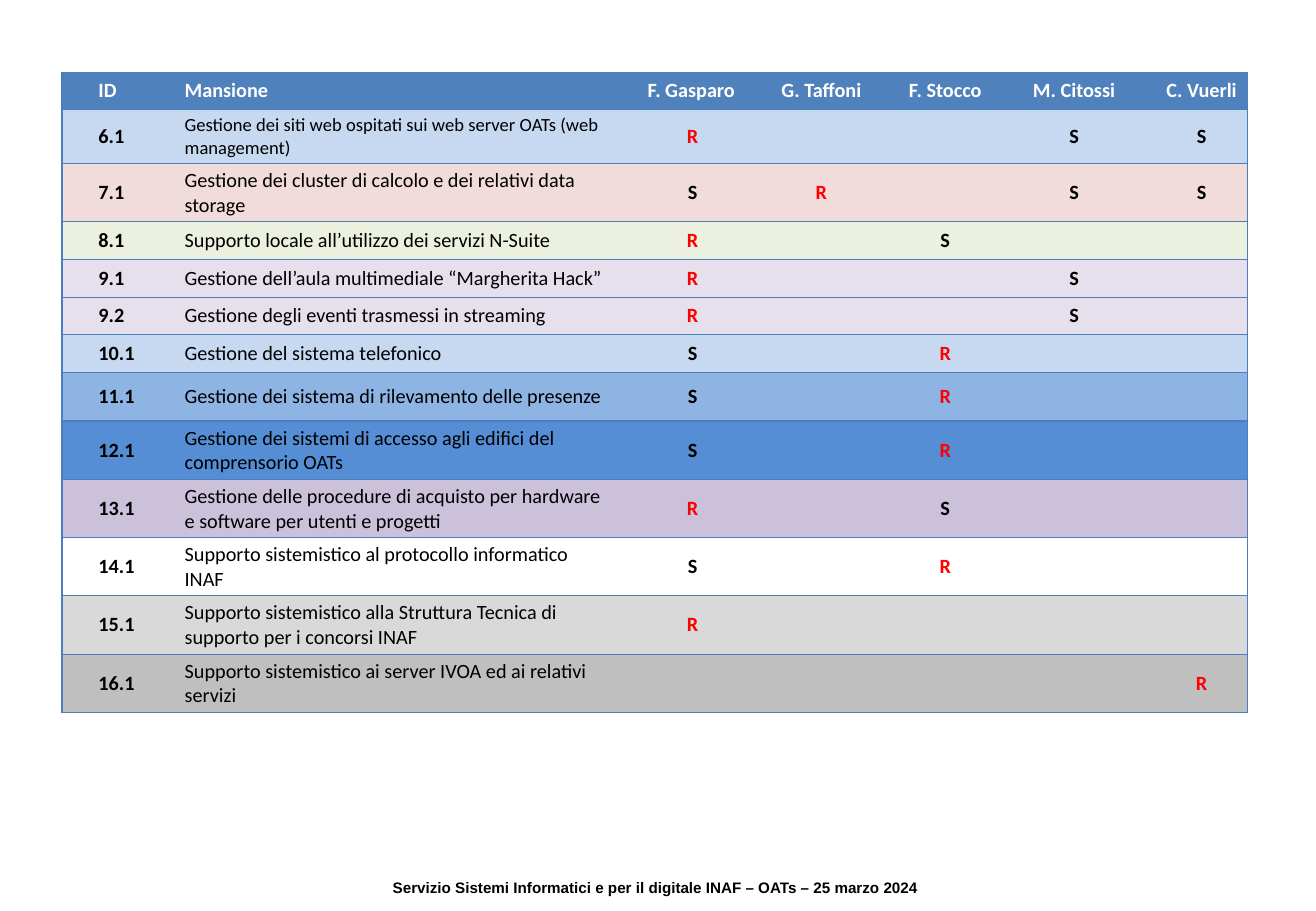
import lxml.etree
import pptx
import pptx.dml.color
import pptx.enum.text
import pptx.oxml.ns
import pptx.util

Inches = pptx.util.Inches
Pt = pptx.util.Pt
qn = pptx.oxml.ns.qn
ALIGN = pptx.enum.text.PP_ALIGN
MIDDLE = pptx.enum.text.MSO_ANCHOR.MIDDLE

LINE = "4B7EBC"
HEAD = "4F81BD"
ROLES = {"R": "FF0000", "S": "000000"}
WIDTHS = [0.71, 3.81, 1.1, 1.02, 1.02, 1.1, 1]
NAMES = ["ID", "Mansione", "F. Gasparo", "G. Taffoni", "F. Stocco",
         "M. Citossi", "C. Vuerli"]

# ID, task, one role letter per person, fill, row height
TASKS = [
    ("6.1", "Gestione dei siti web ospitati sui web server OATs (web management)",
     "R--SS", "C6D9F1", 0.44),
    ("7.1", "Gestione dei cluster di calcolo e dei relativi data storage",
     "SR-SS", "F2DCDB", 0.48),
    ("8.1", "Supporto locale all’utilizzo dei servizi N-Suite",
     "R-S--", "EBF1DE", 0.31),
    ("9.1", "Gestione dell’aula multimediale “Margherita Hack”",
     "R--S-", "E6E0EC", 0.31),
    ("9.2", "Gestione degli eventi trasmessi in streaming",
     "R--S-", "E6E0EC", 0.31),
    ("10.1", "Gestione del sistema telefonico",
     "S-R--", "C6D9F1", 0.31),
    ("11.1", "Gestione dei sistema di rilevamento delle presenze",
     "S-R--", "8EB4E3", 0.4),
    ("12.1", "Gestione dei sistemi di accesso agli edifici del comprensorio OATs",
     "S-R--", "558ED5", 0.48),
    ("13.1", "Gestione delle procedure di acquisto per hardware e software "
     "per utenti e progetti", "R-S--", "CCC1DA", 0.48),
    ("14.1", "Supporto sistemistico al protocollo informatico INAF",
     "S-R--", "FFFFFF", 0.48),
    ("15.1", "Supporto sistemistico alla Struttura Tecnica di supporto "
     "per i concorsi INAF", "R----", "D9D9D9", 0.48),
    ("16.1", "Supporto sistemistico ai server IVOA ed ai relativi servizi",
     "----R", "BFBFBF", 0.48),
]


def color(target, code):
    target.rgb = pptx.dml.color.RGBColor.from_string(code)


def add_run(para, text, size, code, bold=True, face="Calibri"):
    run = para.add_run()
    run.text = text
    run.font.name = face
    run.font.size = Pt(size)
    run.font.bold = bold
    color(run.font.color, code)


def add_edge(cell, side, shown):
    props = cell._tc.get_or_add_tcPr()
    edge = lxml.etree.SubElement(props, qn("a:ln" + side), w=str(Pt(0.75)))
    if shown:
        fill = lxml.etree.SubElement(edge, qn("a:solidFill"))
        lxml.etree.SubElement(fill, qn("a:srgbClr"), val=LINE)
    else:
        lxml.etree.SubElement(edge, qn("a:noFill"))


def style_cell(cell, col, fill):
    cell.margin_left = cell.margin_right = Inches(0.06)
    cell.margin_top = cell.margin_bottom = Inches(0.04)
    cell.vertical_anchor = MIDDLE
    # Rules between rows and around the table, none between columns
    shown = {"L": col == 0, "R": col == len(WIDTHS) - 1, "T": True, "B": True}
    for side in shown:
        add_edge(cell, side, shown[side])
    cell.fill.solid()
    color(cell.fill.fore_color, fill)


def fill_cell(cell, text, align, size, code, bold):
    para = cell.text_frame.paragraphs[0]
    if not text:
        # Keeps an empty cell from stretching its row
        lxml.etree.SubElement(para._p, qn("a:endParaRPr"), sz="1200")
        return
    props = para._p.get_or_add_pPr()
    props.set("marL", str(Inches(0.24)))
    props.set("indent", "0")
    para.alignment = align
    add_run(para, text, size, code, bold)


def add_grid(slide):
    frame = slide.shapes.add_table(len(TASKS) + 1, len(WIDTHS), Inches(0.51),
                                   Inches(0.6), Inches(9.76), Inches(5.26))
    table = frame.table
    table.horz_banding = False
    for col, width in enumerate(WIDTHS):
        table.columns[col].width = Inches(width)

    # Header row
    table.rows[0].height = Inches(0.3)
    for col, name in enumerate(NAMES):
        cell = table.cell(0, col)
        style_cell(cell, col, HEAD)
        align = ALIGN.LEFT if col < 3 else ALIGN.CENTER
        fill_cell(cell, name, align, 12, "FFFFFF", True)

    # Task rows
    for row, (code, task, roles, fill, height) in enumerate(TASKS, 1):
        table.rows[row].height = Inches(height)
        texts = [code, task] + [role.strip("-") for role in roles]
        for col, text in enumerate(texts):
            cell = table.cell(row, col)
            style_cell(cell, col, fill)
            align = ALIGN.LEFT if col < 2 else ALIGN.CENTER
            size = 11 if (row, col) == (1, 1) else 12
            fill_cell(cell, text, align, size,
                      ROLES.get(text, "000000"), col != 1)


def add_foot(slide):
    box = slide.shapes.add_textbox(Inches(1.92), Inches(7.18),
                                   Inches(6.94), Inches(0.25))
    box.text_frame.word_wrap = True
    para = box.text_frame.paragraphs[0]
    para.alignment = ALIGN.CENTER
    add_run(para, "Servizio Sistemi Informatici e per il digitale INAF – OATs "
            "– 25 marzo 2024", 9, "000000", face="Arial")


def main():
    deck = pptx.Presentation()
    deck.slide_width = Inches(10.83)
    deck.slide_height = Inches(7.5)
    slide = deck.slides.add_slide(deck.slide_layouts[6])
    add_foot(slide)
    add_grid(slide)
    deck.save("out.pptx")


if __name__ == "__main__":
    main()
